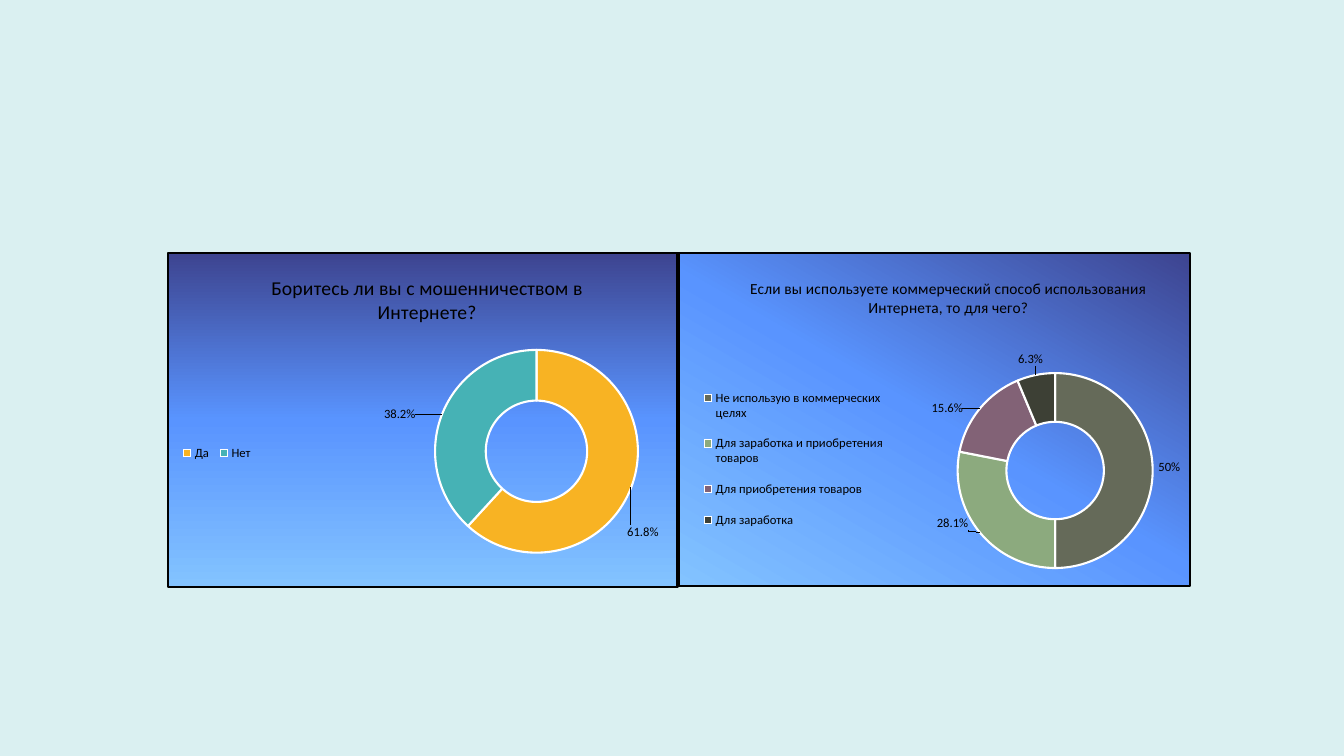
from copy import deepcopy
from dataclasses import dataclass

from lxml import etree
from pptx import Presentation
from pptx import util as u
from pptx.chart import data
from pptx.dml.color import RGBColor
from pptx.enum import chart as kinds, shapes
from pptx.oxml import parse_xml
from pptx.oxml.ns import nsdecls, qn

FONT = "Calibri"
HUES = {
    "back": "DAF0F1", "text": "000000", "edge": "FFFFFF",
    "dark": "3D4490", "blue": "5994FF", "light": "83C3FF",
    "gold": "F8B323", "teal": "46B2B5", "olive": "656A59",
    "green": "8CAA7E", "plum": "826276", "coal": "3D4035",
}


@dataclass
class Panel:
    box: tuple[float, ...]
    hues: tuple[str, ...]
    angle: int


@dataclass
class Slice:
    name: str
    value: float
    label: str
    hue: str
    shift: tuple[float, float]


@dataclass
class Ring:
    title: str
    size: int
    form: str
    box: tuple[float, ...]
    head: tuple[float, ...]
    plot: tuple[float, ...]
    key: tuple[float, ...]
    slices: list[Slice]


PANELS = [
    Panel((6.73, 2.51, 5.07, 3.3), ("light", "blue", "dark"), 60),
    Panel((1.67, 2.51, 5.05, 3.31), ("dark", "blue", "light"), 270),
]
RINGS = [
    Ring("Если вы используете коммерческий способ использования Интернета, то для чего?",
         11, "General", (6.75, 2.57, 5.09, 3.28), (0.13, 0.05),
         (0.54, 0.34, 0.38, 0.6), (0.03, 0.35, 0.38, 0.51), [
             Slice("Не использую в коммерческих целях", 50, "50%", "olive", (0.08, -0.01)),
             Slice("Для заработка и приобретения товаров", 28.1, "28.1%", "green", (-0.09, 0.02)),
             Slice("Для приобретения товаров", 15.6, "15.6%", "plum", (-0.1, -0.05)),
             Slice("Для заработка", 6.3, "6.3%", "coal", (-0.02, -0.12)),
         ]),
    Ring("Боритесь ли вы с мошенничеством в Интернете?",
         14, "0.00%", (1.7, 2.52, 5.03, 3.29), (0.19, 0.05),
         (0.52, 0.26, 0.4, 0.67), (0.01, 0.56, 0.16, 0.08), [
             Slice("Да", 0.618, "61.8%", "gold", (0.07, 0.16)),
             Slice("Нет", 0.382, "38.2%", "teal", (-0.13, -0.03)),
         ]),
]


def rgb(hue: str) -> RGBColor:
    return RGBColor.from_string(HUES[hue])


def style(font, size: int) -> None:
    font.name = FONT
    font.size = u.Pt(size)
    font.bold = False
    font.color.rgb = rgb("text")


def place(node, spot: int, box: tuple[float, ...], edge: bool = True, inner: bool = False) -> None:
    for old in node.findall(qn("c:layout")):
        node.remove(old)
    layout = parse_xml(f"<c:layout {nsdecls('c')}><c:manualLayout/></c:layout>")
    rules = [("layoutTarget", "inner")] if inner else []
    if edge:
        rules += [("xMode", "edge"), ("yMode", "edge")]
    rules += zip("xywh", box)
    for tag, val in rules:
        etree.SubElement(layout[0], qn(f"c:{tag}")).set("val", str(val))
    node.insert(spot, layout)


def draw_panel(slide, panel: Panel) -> None:
    rect = slide.shapes.add_shape(shapes.MSO_SHAPE.RECTANGLE, *map(u.Inches, panel.box))
    rect.shadow.inherit = False
    rect.line.color.rgb = rgb("text")
    rect.line.width = u.Pt(1.5)
    rect.fill.gradient()
    rect.fill.gradient_angle = panel.angle
    first = next(rect._element.iter(qn("a:gs")))
    first.addnext(deepcopy(first))
    for i, (stop, hue) in enumerate(zip(rect.fill.gradient_stops, panel.hues)):
        stop.position = i / 2
        stop.color.rgb = rgb(hue)


def draw_ring(slide, ring: Ring) -> None:
    table = data.CategoryChartData(number_format=ring.form)
    table.categories = [piece.name for piece in ring.slices]
    table.add_series(ring.title, [piece.value for piece in ring.slices])
    frame = slide.shapes.add_chart(
        kinds.XL_CHART_TYPE.DOUGHNUT, *map(u.Inches, ring.box), table)
    chart = frame.chart
    style(chart.font, 10)
    root = chart._chartSpace
    root.find(qn("c:chart")).addnext(parse_xml(
        f"<c:spPr {nsdecls('c', 'a')}><a:noFill/><a:ln><a:noFill/></a:ln></c:spPr>"))
    next(root.iter(qn("c:holeSize"))).set("val", "75")

    chart.has_title = True
    run = chart.chart_title.text_frame.paragraphs[0].add_run()
    run.text = ring.title
    style(run.font, ring.size)
    chart.chart_title.include_in_layout = False

    chart.has_legend = True
    chart.legend.position = kinds.XL_LEGEND_POSITION.BOTTOM
    chart.legend.include_in_layout = False
    style(chart.legend.font, 9)

    place(next(root.iter(qn("c:title"))), 1, ring.head)
    place(next(root.iter(qn("c:plotArea"))), 0, ring.plot, inner=True)
    place(next(root.iter(qn("c:legend"))), 1, ring.key)

    plot = chart.plots[0]
    plot.vary_by_categories = True
    series = plot.series[0]
    labels = series.data_labels
    labels.show_value = True
    labels.show_percentage = False
    labels.number_format = ring.form
    labels.number_format_is_linked = False
    style(labels.font, 9)
    for i, piece in enumerate(ring.slices):
        point = series.points[i]
        point.format.fill.solid()
        point.format.fill.fore_color.rgb = rgb(piece.hue)
        point.format.line.color.rgb = rgb("edge")
        point.format.line.width = u.Pt(1.5)
        run = point.data_label.text_frame.paragraphs[0].add_run()
        run.text = piece.label
        style(run.font, 9)
    for node, piece in zip(root.iter(qn("c:dLbl")), ring.slices):
        place(node, 1, piece.shift, edge=False)


def main() -> None:
    deck = Presentation()
    deck.slide_width = u.Inches(13.33)
    deck.slide_height = u.Inches(7.5)
    slide = deck.slides.add_slide(deck.slide_layouts[6])
    slide.background.fill.solid()
    slide.background.fill.fore_color.rgb = rgb("back")
    for panel in PANELS:
        draw_panel(slide, panel)
    for ring in RINGS:
        draw_ring(slide, ring)
    deck.save("out.pptx")


if __name__ == "__main__":
    main()
